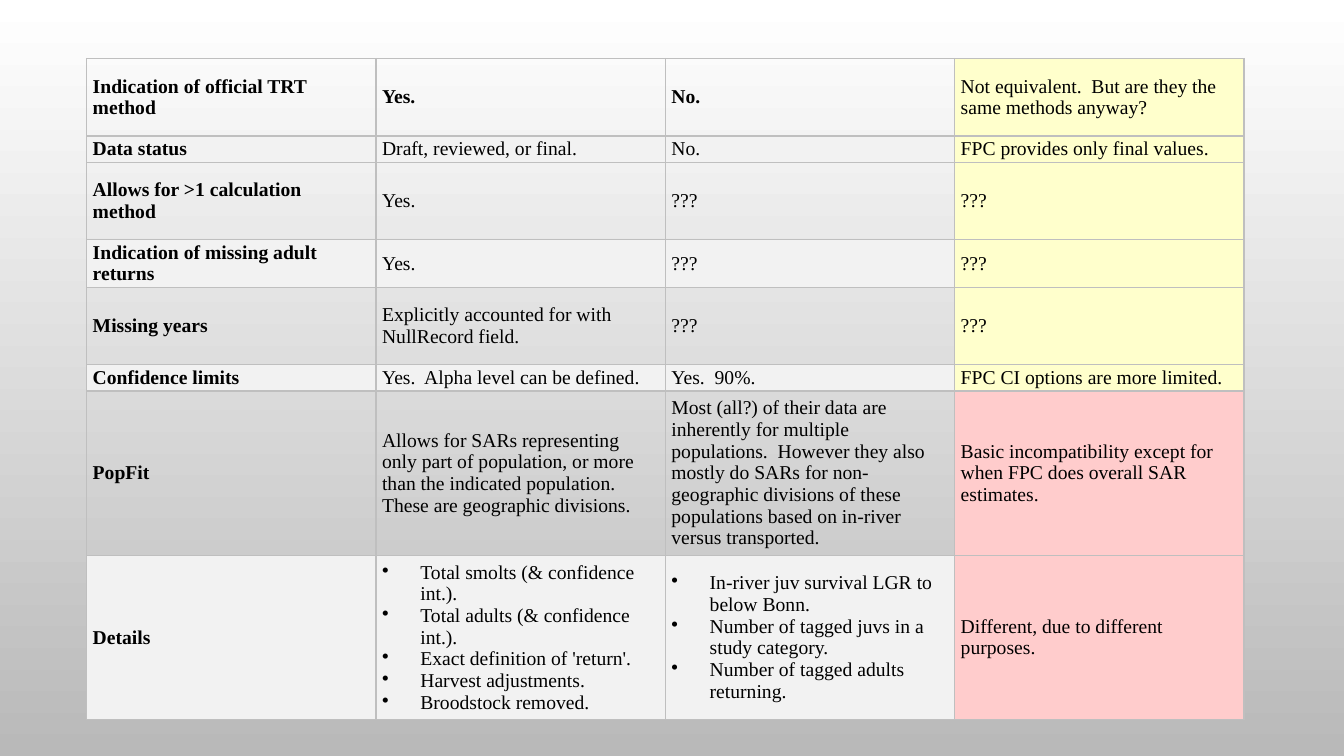
from dataclasses import dataclass

from lxml import etree
from pptx import Presentation
from pptx.dml.color import RGBColor
from pptx.enum.text import MSO_ANCHOR
from pptx.oxml.ns import qn
from pptx.slide import Slide
from pptx.table import _Cell
from pptx.util import Inches, Pt

MIDDLE = MSO_ANCHOR.MIDDLE


@dataclass(frozen=True)
class Theme:
    font: str = "Times New Roman"
    size: int = 14
    text: str = "000000"
    border: str = "BFBFBF"
    border_width: int = 1
    stripe: str = "F2F2F2"
    partial: str = "FFFFCC"
    conflict: str = "FFCCCC"
    background_top: str = "FFFFFF"
    background_bottom: str = "B9B9B9"


THEME = Theme()


@dataclass(frozen=True)
class Comparison:
    topic: str
    ours: str | tuple[str, ...]
    theirs: str | tuple[str, ...]
    verdict: str
    height: float
    verdict_fill: str = THEME.partial
    bold_answers: bool = False


COMPARISONS = [
    Comparison("Indication of official TRT method", "Yes.", "No.",
               "Not equivalent.  But are they the same methods anyway?", 0.77,
               bold_answers=True),
    Comparison("Data status", "Draft, reviewed, or final.", "No.",
               "FPC provides only final values.", 0.26),
    Comparison("Allows for >1 calculation method", "Yes.", "???", "???", 0.77),
    Comparison("Indication of missing adult returns", "Yes.", "???", "???", 0.47),
    Comparison("Missing years", "Explicitly accounted for with NullRecord field.",
               "???", "???", 0.77),
    Comparison("Confidence limits", "Yes.  Alpha level can be defined.", "Yes.  90%.",
               "FPC CI options are more limited.", 0.26),
    Comparison("PopFit",
               "Allows for SARs representing only part of population, or more than "
               "the indicated population.  These are geographic divisions.",
               "Most (all?) of their data are inherently for multiple populations.  "
               "However they also mostly do SARs for non-geographic divisions of these "
               "populations based on in-river versus transported.",
               "Basic incompatibility except for when FPC does overall SAR estimates.",
               1.63, THEME.conflict),
    Comparison("Details",
               ("Total smolts (& confidence int.).", "Total adults (& confidence int.).",
                "Exact definition of 'return'.", "Harvest adjustments.",
                "Broodstock removed."),
               ("In-river juv survival LGR to below Bonn.",
                "Number of tagged juvs in a study category.",
                "Number of tagged adults returning."),
               "Different, due to different purposes.", 1.63, THEME.conflict),
]

LEFT, TOP = 0.86, 0.58
COLUMN_WIDTH = 2.87
COLUMN_COUNT = 4
SIDE_MARGIN = 0.06
BULLET_INDENT = 0.38


def rgb(value: str) -> RGBColor:
    return RGBColor.from_string(value)


def paint_background(slide: Slide) -> None:
    fill = slide.background.fill
    fill.gradient()
    fill.gradient_angle = 270
    for stop, color in zip(fill.gradient_stops,
                           (THEME.background_top, THEME.background_bottom)):
        stop.color.rgb = rgb(color)


def write_text(cell: _Cell, text: str | tuple[str, ...], *, bold: bool = False) -> None:
    bulleted = isinstance(text, tuple)
    lines = text if bulleted else (text,)
    frame = cell.text_frame
    for index, line in enumerate(lines):
        paragraph = frame.paragraphs[0] if index == 0 else frame.add_paragraph()
        run = paragraph.add_run()
        run.text = line
        run.font.name = THEME.font
        run.font.size = Pt(THEME.size)
        run.font.bold = bold
        run.font.color.rgb = rgb(THEME.text)
        if bulleted:
            properties = paragraph._p.get_or_add_pPr()
            properties.set("marL", str(Inches(BULLET_INDENT)))
            properties.set("indent", str(-Inches(BULLET_INDENT)))
            etree.SubElement(properties, qn("a:buChar"), char="•")


def draw_borders(cell: _Cell) -> None:
    properties = cell._tc.get_or_add_tcPr()
    for position, side in enumerate(("a:lnL", "a:lnR", "a:lnT", "a:lnB")):
        line = etree.Element(qn(side), w=str(Pt(THEME.border_width)))
        solid = etree.SubElement(line, qn("a:solidFill"))
        etree.SubElement(solid, qn("a:srgbClr"), val=THEME.border)
        properties.insert(position, line)


def format_cell(cell: _Cell, fill: str | None) -> None:
    cell.vertical_anchor = MIDDLE
    cell.margin_left = cell.margin_right = Inches(SIDE_MARGIN)
    cell.margin_top = cell.margin_bottom = 0
    if fill:
        cell.fill.solid()
        cell.fill.fore_color.rgb = rgb(fill)
    else:
        cell.fill.background()
    draw_borders(cell)


def add_comparison_table(slide: Slide, comparisons: list[Comparison]) -> None:
    table = slide.shapes.add_table(
        len(comparisons), COLUMN_COUNT, Inches(LEFT), Inches(TOP),
        Inches(COLUMN_WIDTH * COLUMN_COUNT),
        Inches(sum(comparison.height for comparison in comparisons)),
    ).table
    table.first_row = False
    table.horz_banding = False
    for column in table.columns:
        column.width = Inches(COLUMN_WIDTH)
    for index, comparison in enumerate(comparisons):
        table.rows[index].height = Inches(comparison.height)
        stripe = THEME.stripe if index % 2 else None
        bold = comparison.bold_answers
        entries = [
            (comparison.topic, True, stripe),
            (comparison.ours, bold, stripe),
            (comparison.theirs, bold, stripe),
            (comparison.verdict, False, comparison.verdict_fill),
        ]
        for cell, (text, is_bold, fill) in zip(table.rows[index].cells, entries):
            write_text(cell, text, bold=is_bold)
            format_cell(cell, fill)


def main() -> None:
    presentation = Presentation()
    presentation.slide_width = Inches(13.33)
    presentation.slide_height = Inches(7.5)
    slide = presentation.slides.add_slide(presentation.slide_layouts[6])
    paint_background(slide)
    add_comparison_table(slide, COMPARISONS)
    presentation.save("out.pptx")


if __name__ == "__main__":
    main()
